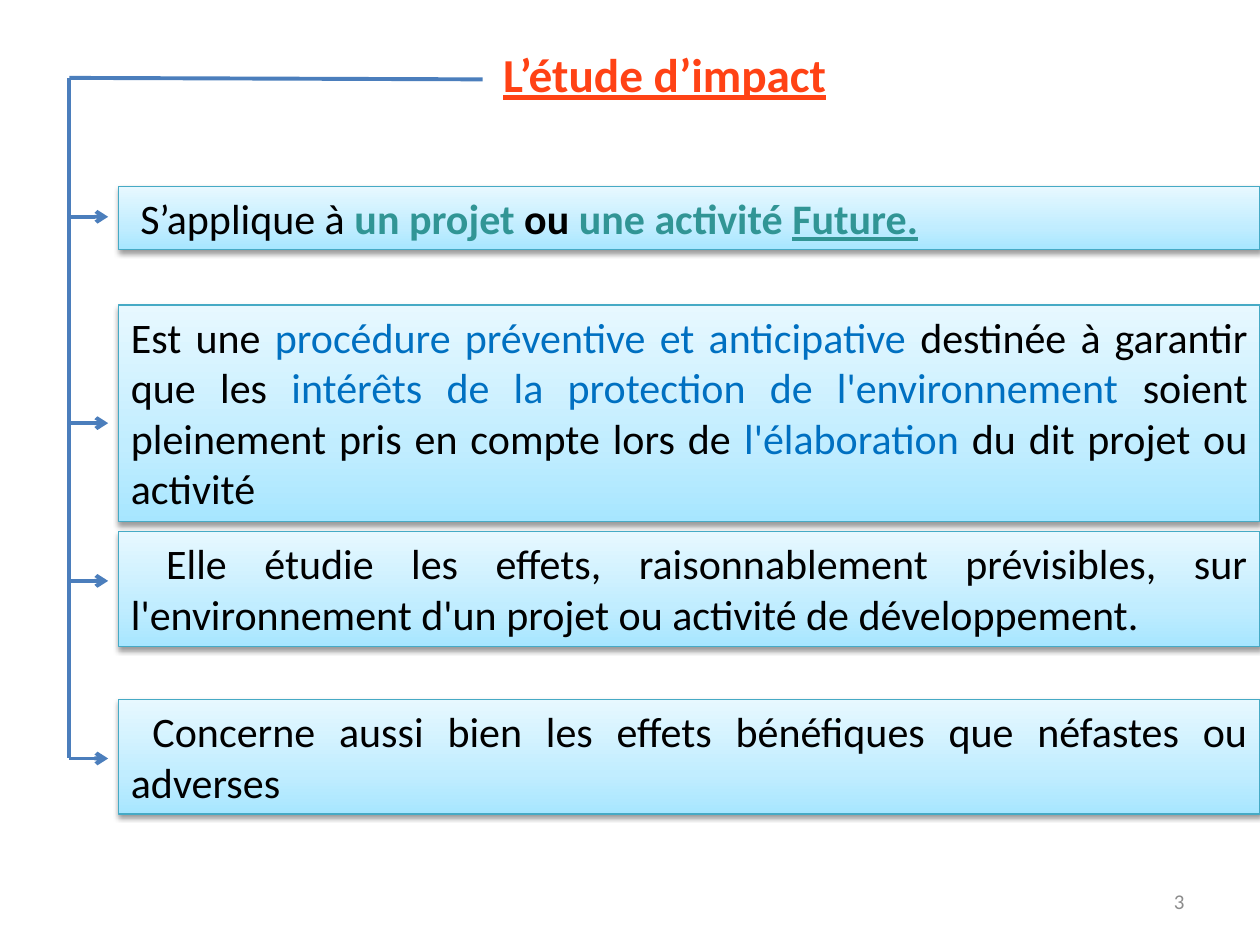
"""Build the slide that defines the impact study in four linked boxes."""
from copy import deepcopy
from lxml import etree
from pptx import Presentation
from pptx.dml import color
from pptx.enum import shapes, text
from pptx.oxml import ns, parse_xml
from pptx.util import Cm, Pt

FONT = "Calibri"
BLACK, TEAL, BLUE, EDGE, WIRE = "000000", "319595", "0070C1", "46AAC5", "4B7EBC"
STOPS = [(0, "A7E6FF"), (0.35, "C1EDFF"), (1, "E7F8FF")]
LEFT, JUST = text.PP_ALIGN.LEFT, text.PP_ALIGN.JUSTIFY

# Each run: words, colour, size, bold, underline
BOXES = [
    (3.76, 1.27, 4.37, LEFT, [
        (" S’applique à ", BLACK, 24, False, False),
        ("un projet ", TEAL, 24, True, False),
        ("ou ", BLACK, 24, True, False),
        ("une activité ", TEAL, 24, True, False),
        ("Future.", TEAL, 24, True, True)]),
    (6.15, 4.37, 8.53, JUST, [
        ("Est une ", BLACK, 24, False, False),
        ("procédure préventive et anticipative ", BLUE, 24, False, False),
        ("destinée à garantir que les ", BLACK, 24, False, False),
        ("intérêts de la protection de l'environnement ", BLUE, 24, False, False),
        ("soient pleinement pris en compte lors de ", BLACK, 24, False, False),
        ("l'élaboration ", BLUE, 24, False, False),
        ("du dit projet ou activité", BLACK, 24, False, False)]),
    (10.72, 2.31, 11.71, JUST, [
        (" ", BLACK, 18, False, False),
        ("Elle étudie les effets, raisonnablement prévisibles, sur "
         "l'environnement d'un projet ou activité de développement.",
         BLACK, 24, False, False)]),
    (14.1, 2.31, 15.29, JUST, [
        (" ", BLACK, 18, False, False),
        ("Concerne aussi bien les effets bénéfiques que néfastes ou adverses",
         BLACK, 24, False, False)]),
]
LABELS = [
    ((9.73, 0.79, 7.34, 1.6), text.PP_ALIGN.CENTER, text.MSO_ANCHOR.TOP, 5.4,
     ("L’étude d’impact", "FF4215", 27, True, True)),
    ((18.21, 17.65, 5.92, 1.02), text.PP_ALIGN.RIGHT, text.MSO_ANCHOR.MIDDLE, 0,
     ("3", "8C8C8C", 12, False, False)),
]
BOX_X, BOX_W = 2.39, 23.01
TRUNK, TIP = 1.4, 2.18
TRUNKS = [(9.73, 1.6, TRUNK, 1.57), (TRUNK, 1.57, TRUNK, 4.37),
          (TRUNK, 4.17, TRUNK, 15.29)]


def rgb(code):
    return color.RGBColor.from_string(code)


def write(frame, align, runs):
    frame.word_wrap = True
    para = frame.paragraphs[0]
    para.alignment = align
    para.font.name = FONT
    for words, hue, size, bold, under in runs:
        run = para.add_run()
        run.text = words
        font = run.font
        font.size, font.bold, font.underline = Pt(size), bold, under
        font.color.rgb = rgb(hue)
    return para


def shade(box):
    fill = box.fill
    fill.gradient()
    fill.gradient_angle = 90
    stops = box._element.spPr.find(".//" + ns.qn("a:gsLst"))
    stops.append(deepcopy(stops[0]))
    for stop, (pos, hue) in zip(fill.gradient_stops, STOPS):
        stop.position = pos
        stop.color.rgb = rgb(hue)
    box.shadow.inherit = False
    box._element.spPr.find(ns.qn("a:effectLst")).append(parse_xml(
        f'<a:outerShdw {ns.nsdecls("a")} blurRad="39370" dist="20320" dir="5400000" '
        'rotWithShape="0"><a:srgbClr val="000000"><a:alpha val="38000"/>'
        '</a:srgbClr></a:outerShdw>'))


def wire(slide, ends, arrow=False):
    line = slide.shapes.add_connector(
        shapes.MSO_CONNECTOR.STRAIGHT, *map(Cm, ends))
    line.line.color.rgb = rgb(WIRE)
    line.line.width = Pt(2.25)
    if arrow:
        etree.SubElement(line.line._get_or_add_ln(), ns.qn("a:tailEnd"), type="arrow")
    etree.SubElement(line._element.spPr, ns.qn("a:effectLst"))


def main():
    deck = Presentation()
    deck.slide_width, deck.slide_height = Cm(25.4), Cm(19.05)
    slide = deck.slides.add_slide(deck.slide_layouts[6])
    for place, align, anchor, gap, run in LABELS:
        frame = slide.shapes.add_textbox(*map(Cm, place)).text_frame
        frame.vertical_anchor = anchor
        write(frame, align, [run]).space_before = Pt(gap)
    for top, high, _, align, runs in BOXES:
        box = slide.shapes.add_shape(
            shapes.MSO_SHAPE.RECTANGLE, *map(Cm, (BOX_X, top, BOX_W, high)))
        shade(box)
        box.line.color.rgb = rgb(EDGE)
        box.line.width = Pt(0.75)
        box.text_frame.vertical_anchor = text.MSO_ANCHOR.TOP
        box.text_frame.auto_size = text.MSO_AUTO_SIZE.SHAPE_TO_FIT_TEXT
        write(box.text_frame, align, runs)
    for ends in TRUNKS:
        wire(slide, ends)
    for _, _, mid, _, _ in BOXES:
        wire(slide, (TRUNK, mid, TIP, mid), arrow=True)
    deck.save("out.pptx")


if __name__ == "__main__":
    main()
